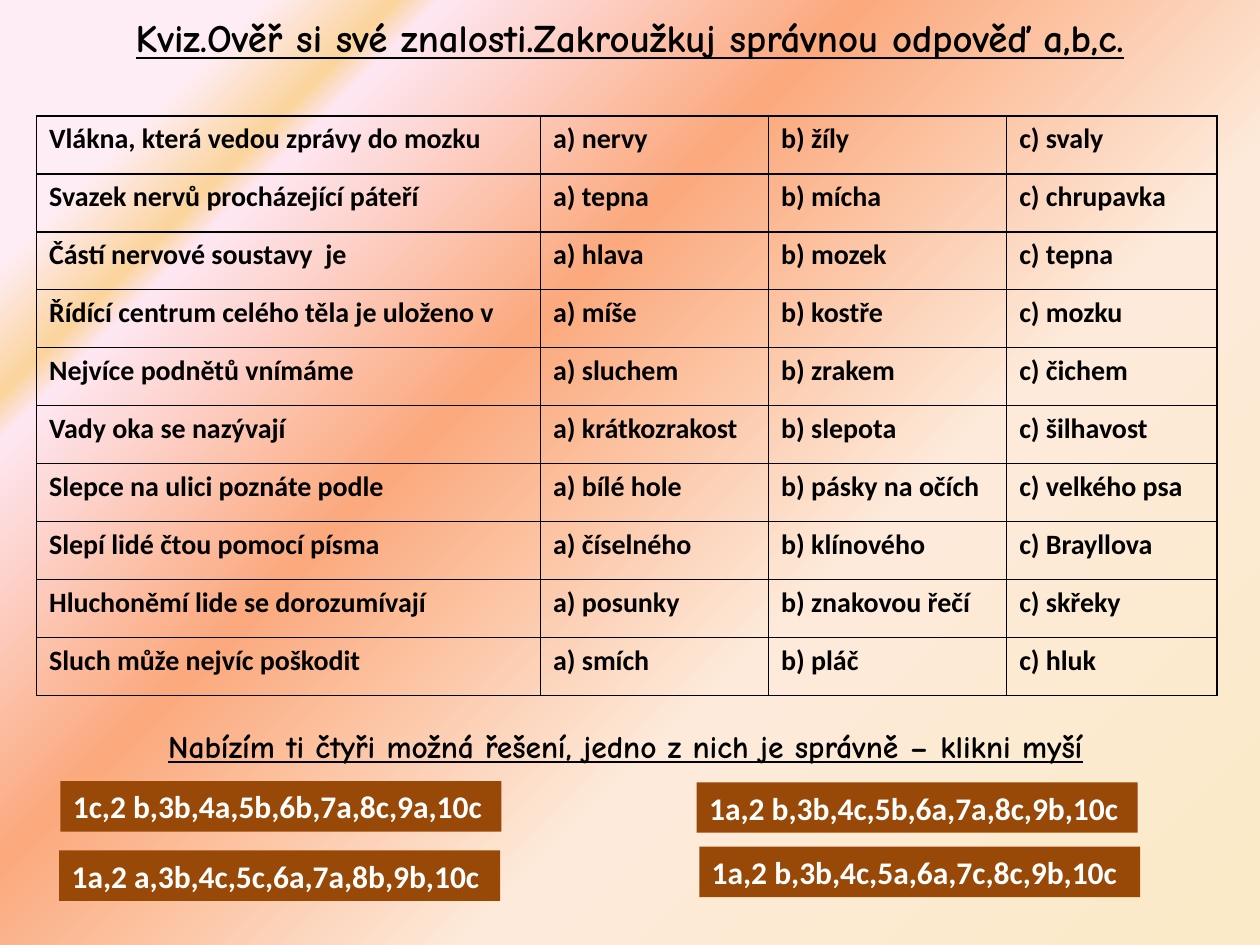
from pptx import Presentation
from pptx.dml.color import RGBColor
from pptx.enum import shapes, text
from pptx.oxml import parse_xml
from pptx.oxml.ns import nsdecls, qn
from pptx.util import Inches, Pt

BLACK = RGBColor(0x00, 0x00, 0x00)
WHITE = RGBColor(0xFF, 0xFF, 0xFF)
BROWN = RGBColor(0x98, 0x48, 0x07)
BACKGROUND_STOPS = [
    (2, RGBColor(0xFB, 0xEA, 0xC7)),
    (36, RGBColor(0xFD, 0xEA, 0xDA)),
    (61, RGBColor(0xFB, 0xA9, 0x7D)),
    (80, RGBColor(0xFE, 0xE7, 0xF2)),
    (82, RGBColor(0xFB, 0xD4, 0x9C)),
    (88, RGBColor(0xFE, 0xED, 0xF5)),
]

TITLE = "Kviz.Ověř si své znalosti.Zakroužkuj správnou odpověď a,b,c."
HINT = "Nabízím ti čtyři možná řešení, jedno z nich je správně – klikni myší"
QUESTIONS = [
    ("Vlákna, která vedou zprávy do mozku", "nervy", "žíly", "svaly"),
    ("Svazek nervů procházející páteří", "tepna", "mícha", "chrupavka"),
    ("Částí nervové soustavy  je", "hlava", "mozek", "tepna"),
    ("Řídící centrum celého těla je uloženo v", "míše", "kostře", "mozku"),
    ("Nejvíce podnětů vnímáme", "sluchem", "zrakem", "čichem"),
    ("Vady oka se nazývají", "krátkozrakost", "slepota", "šilhavost"),
    ("Slepce na ulici poznáte podle", "bílé hole", "pásky na očích", "velkého psa"),
    ("Slepí lidé čtou pomocí písma", "číselného", "klínového", "Brayllova"),
    ("Hluchoněmí lide se dorozumívají", "posunky", "znakovou řečí", "skřeky"),
    ("Sluch může nejvíc poškodit", "smích", "pláč", "hluk"),
]
COLUMN_WIDTHS = [4, 1.81, 1.89, 1.67]
ROW_HEIGHT = 0.46
SOLUTIONS = [  # left, top, answers
    (5.53, 6.21, "1a,2 b,3b,4c,5b,6a,7a,8c,9b,10c"),
    (0.48, 6.2, "1c,2 b,3b,4a,5b,6b,7a,8c,9a,10c"),
    (0.47, 6.75, "1a,2 a,3b,4c,5c,6a,7a,8b,9b,10c"),
    (5.55, 6.72, "1a,2 b,3b,4c,5a,6a,7c,8c,9b,10c"),
]


def write(frame, wording, size, font="Calibri", color=BLACK, underline=False,
          align=text.PP_ALIGN.LEFT):
    paragraph = frame.paragraphs[0]
    paragraph.alignment = align
    run = paragraph.add_run()
    run.text = wording
    run.font.name = font
    run.font.size = Pt(size)
    run.font.bold = True
    run.font.underline = underline
    run.font.color.rgb = color


def add_heading(slide, wording, box, size):
    heading = slide.shapes.add_textbox(*map(Inches, box)).text_frame
    heading.word_wrap = True
    write(heading, wording, size, font="Comic Neue", underline=True,
          align=text.PP_ALIGN.CENTER)


def paint_background(slide):
    """Fill the slide with a circular gradient centred on the bottom right."""
    slide.background.fill.solid()
    solid = slide.element.find(".//" + qn("a:solidFill"))
    stops = "".join(
        f'<a:gs pos="{position * 1000}"><a:srgbClr val="{color}"/></a:gs>'
        for position, color in BACKGROUND_STOPS)
    gradient = parse_xml(
        f'<a:gradFill {nsdecls("a")} rotWithShape="1"><a:gsLst>{stops}</a:gsLst>'
        '<a:path path="circle"><a:fillToRect l="100000" t="100000"/></a:path>'
        '</a:gradFill>')
    solid.getparent().replace(solid, gradient)


def add_quiz(slide):
    frame = slide.shapes.add_table(
        len(QUESTIONS), len(COLUMN_WIDTHS), Inches(0.29), Inches(0.92),
        Inches(sum(COLUMN_WIDTHS)), Inches(ROW_HEIGHT * len(QUESTIONS)))
    quiz = frame.table
    quiz.first_row = quiz.horz_banding = False
    for column, width in zip(quiz.columns, COLUMN_WIDTHS):
        column.width = Inches(width)
    for row, (question, *options) in zip(quiz.rows, QUESTIONS):
        row.height = Inches(ROW_HEIGHT)
        labelled = [f"{letter}) {option}" for letter, option in zip("abc", options)]
        for cell, wording in zip(row.cells, [question, *labelled]):
            cell.fill.background()
            write(cell.text_frame, wording, 16)
    for properties in frame.element.iter(qn("a:tcPr")):
        for index, side in enumerate("LRTB"):
            properties.insert(index, parse_xml(
                f'<a:ln{side} {nsdecls("a")} w="{Pt(1)}"><a:solidFill>'
                f'<a:srgbClr val="{BLACK}"/></a:solidFill></a:ln{side}>'))


def add_solution(slide, left, top, answers):
    button = slide.shapes.add_shape(
        shapes.MSO_SHAPE.RECTANGLE, *map(Inches, (left, top, 3.5, 0.4)))
    button.shadow.inherit = False
    button.fill.solid()
    button.fill.fore_color.rgb = BROWN
    button.line.fill.background()
    button.text_frame.word_wrap = True
    button.text_frame.vertical_anchor = text.MSO_ANCHOR.TOP
    write(button.text_frame, answers, 18, color=WHITE)


def main():
    deck = Presentation()
    deck.slide_width, deck.slide_height = Inches(10), Inches(7.5)
    slide = deck.slides.add_slide(deck.slide_layouts[6])
    paint_background(slide)
    add_heading(slide, TITLE, (0.5, 0.06, 9, 0.69), 22.2)
    add_quiz(slide)
    add_heading(slide, HINT, (0.28, 5.72, 9.37, 0.4), 18)
    for solution in SOLUTIONS:
        add_solution(slide, *solution)
    deck.save("out.pptx")


if __name__ == "__main__":
    main()
